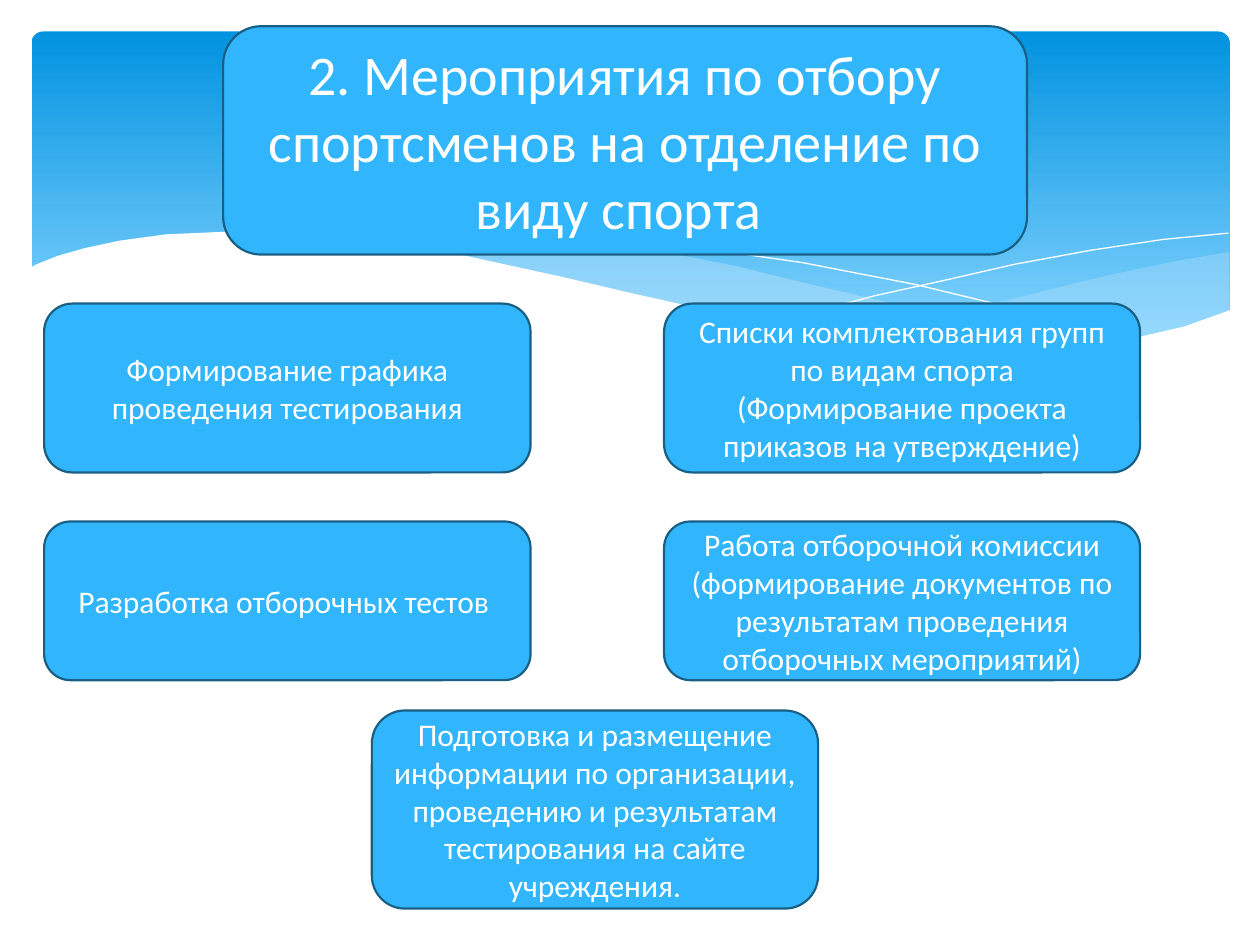
from lxml import etree
from pptx import Presentation
from pptx.dml.color import RGBColor
from pptx.enum.shapes import MSO_SHAPE
from pptx.enum.text import MSO_ANCHOR, PP_ALIGN
from pptx.oxml.ns import qn
from pptx.util import Pt

ROUNDED = MSO_SHAPE.ROUNDED_RECTANGLE
CENTER = PP_ALIGN.CENTER
MIDDLE = MSO_ANCHOR.MIDDLE

WHITE = RGBColor(0xFF, 0xFF, 0xFF)
SKY = RGBColor(0x31, 0xB6, 0xFD)
OUTLINE = RGBColor(0x19, 0x5F, 0x84)
BAND_TOP = RGBColor(0x02, 0x93, 0xE0)
BAND_BOTTOM = RGBColor(0x83, 0xD3, 0xFE)
MIST = RGBColor(0xC6, 0xE7, 0xFC)

RIGHT_WAVE = [
    (702, 144), (673, 149), (642, 155.5), (620, 160.5), (580, 170.5),
    (542, 178.5), (508, 185), (476, 191), (497.5, 193.7), (527, 197),
    (554, 199), (578, 200), (601, 199.5), (621, 198.5), (640, 196.5),
    (657, 193.5), (673, 189.5), (683, 185), (702.5, 178), (702.5, 144)]
MIDDLE_WAVE = [
    (643, 196.5), (603, 191), (558, 183), (508, 173), (453, 160),
    (420.5, 152), (390, 146), (361, 141), (335, 137.5), (302, 134.6),
    (274, 133.2), (248, 133.9), (225, 135.5), (206, 137.5), (246, 143.3),
    (276, 149), (307, 155.5), (353.5, 167), (407.5, 178.5), (456.5, 188),
    (500.5, 194.5), (538.5, 198.5), (573, 200), (603, 199.8), (630.5, 198)]
FALLING_CURVE = [
    (222.5, 140.4), (236, 138.2), (254, 136), (279, 134.6), (312, 134.7),
    (352, 136.8), (400, 141.8), (458, 150), (523.5, 162.7), (598, 180.7),
    (653, 196)]
RISING_CURVE = [
    (441.5, 185), (470, 177), (500, 169), (538.5, 160.5), (580, 151),
    (623.5, 143), (665, 136.8), (702, 133.2)]
WHITE_WAVE = [
    (703.5, 177), (677, 186.5), (647, 193.5), (612, 198), (582.5, 199.5),
    (548, 198.5), (510, 195.5), (466.5, 188.6), (417, 180), (362, 167.8),
    (322, 158.4), (263, 145.5), (210, 136.8), (166, 133.2), (127, 132.5),
    (95, 133.9), (68.5, 137.5), (48.5, 141.8), (33, 146.2), (21, 151),
    (16.5, 153.4), (16.5, 237), (703.5, 237)]

LEFT_COL, RIGHT_COL = (25.2, 278), (379.5, 272)    # left, width
TOP_ROW, LOWER_ROW = (173.5, 96.5), (298, 90.7)    # top, height
CARDS = [
    (LEFT_COL, TOP_ROW, "Формирование графика проведения тестирования"),
    (RIGHT_COL, TOP_ROW, "Списки комплектования групп по видам спорта "
     "(Формирование проекта приказов на утверждение)"),
    (LEFT_COL, LOWER_ROW, "Разработка отборочных тестов "),
    (RIGHT_COL, LOWER_ROW, "Работа отборочной комиссии (формирование "
     "документов по результатам проведения отборочных мероприятий)"),
    ((212.5, 255), (406, 113.2), "Подготовка и размещение информации по "
     "организации, проведению и результатам тестирования на сайте "
     "учреждения."),
]


class SlideBuilder:
    font = "Calibri"
    body_size = 18
    border = 1.25

    def __init__(self, slide):
        self.slide = slide

    def rounded(self, left, top, width, height):
        sp = self.slide.shapes.add_shape(
            ROUNDED, Pt(left), Pt(top), Pt(width), Pt(height))
        sp.shadow.inherit = False
        return sp

    def band(self, left, top, width, height):
        """Header band with a gradient running downwards."""
        sp = self.rounded(left, top, width, height)
        sp.adjustments[0] = 0.034
        sp.line.fill.background()
        sp.fill.gradient()
        sp.fill.gradient_angle = 270
        stops = ((0, BAND_TOP), (0.9, BAND_BOTTOM))
        for stop, (position, color) in zip(sp.fill.gradient_stops, stops):
            stop.position = position
            stop.color.rgb = color

    def outline(self, points, close):
        pts = [(Pt(x), Pt(y)) for x, y in points]
        builder = self.slide.shapes.build_freeform(*pts[0])
        builder.add_line_segments(pts[1:], close=close)
        sp = builder.convert_to_shape()
        sp.shadow.inherit = False
        return sp

    def wave(self, points, color, opacity=100):
        sp = self.outline(points, True)
        sp.line.fill.background()
        sp.fill.solid()
        sp.fill.fore_color.rgb = color
        if opacity < 100:
            clr = sp.fill._xPr.find(".//" + qn("a:srgbClr"))
            etree.SubElement(clr, qn("a:alpha"), val=str(opacity * 1000))

    def curve(self, points):
        sp = self.outline(points, False)
        sp.fill.background()
        sp.line.color.rgb = WHITE
        sp.line.width = Pt(0)

    def card(self, left, top, width, height, text, size=body_size):
        sp = self.rounded(left, top, width, height)
        sp.fill.solid()
        sp.fill.fore_color.rgb = SKY
        sp.line.color.rgb = OUTLINE
        sp.line.width = Pt(self.border)
        tf = sp.text_frame
        tf.word_wrap = True
        tf.vertical_anchor = MIDDLE
        p = tf.paragraphs[0]
        p.alignment = CENTER
        r = p.add_run()
        r.text = text
        r.font.name = self.font
        r.font.size = Pt(size)
        r.font.color.rgb = WHITE


def main():
    prs = Presentation()
    prs.slide_width, prs.slide_height = Pt(720), Pt(540)
    s = SlideBuilder(prs.slides.add_slide(prs.slide_layouts[6]))

    s.band(18, 18, 684.7, 194.4)
    s.wave(RIGHT_WAVE, MIST, 29)
    s.wave(MIDDLE_WAVE, MIST, 40)
    s.curve(FALLING_CURVE)
    s.curve(RISING_CURVE)
    s.wave(WHITE_WAVE, WHITE)

    s.card(127.5, 15, 459.4, 130.5, "2. Мероприятия по отбору спортсменов "
           "на отделение по виду спорта ", size=32)
    for (left, width), (top, height), text in CARDS:
        s.card(left, top, width, height, text)

    prs.save("out.pptx")


if __name__ == "__main__":
    main()
